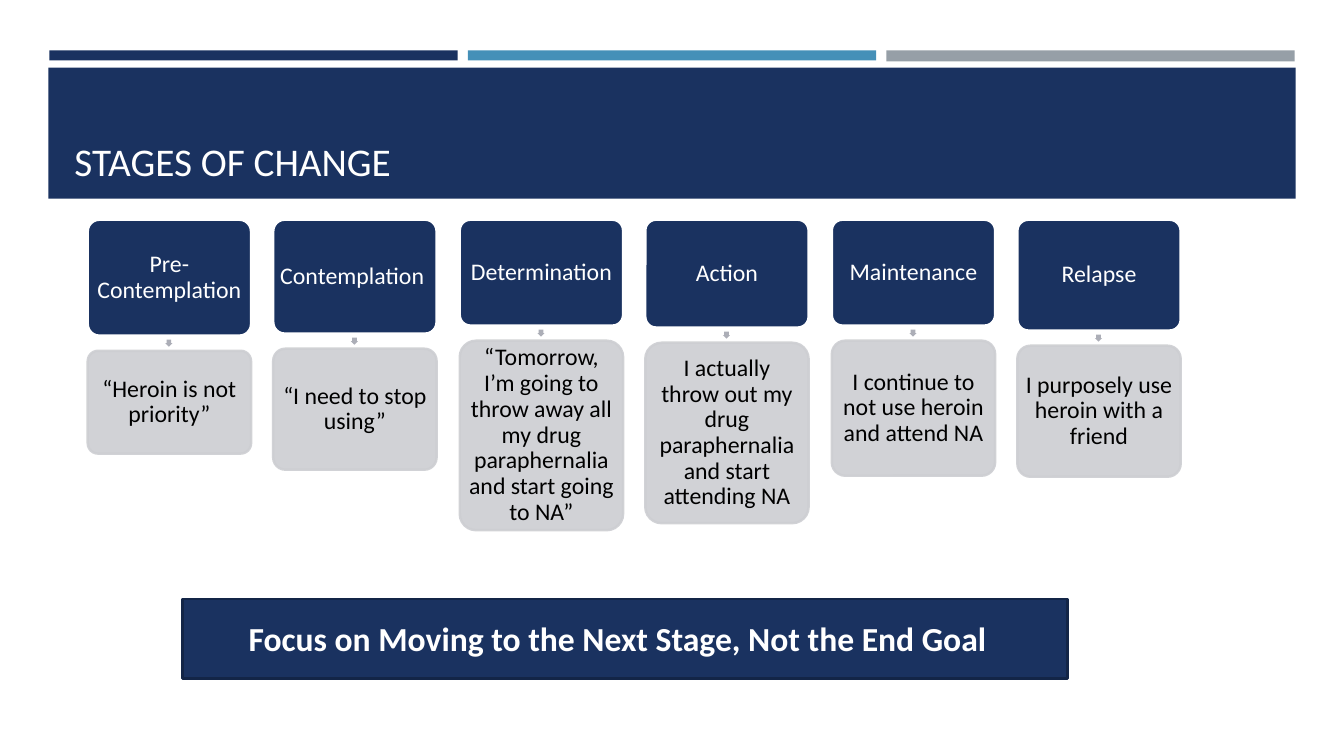
"""Build the "Stages of Change" slide."""
from dataclasses import dataclass
from typing import Optional

from lxml import etree
from pptx import Presentation
from pptx.dml.color import RGBColor
from pptx.dml.fill import FillFormat
from pptx.enum.shapes import MSO_SHAPE
from pptx.enum.text import MSO_ANCHOR, MSO_AUTO_SIZE, PP_ALIGN
from pptx.oxml.ns import qn
from pptx.shapes.autoshape import Shape
from pptx.slide import Slide
from pptx.util import Emu, Pt

RECTANGLE = MSO_SHAPE.RECTANGLE
ROUNDED = MSO_SHAPE.ROUNDED_RECTANGLE
ARROW = MSO_SHAPE.RIGHT_ARROW
CENTER = PP_ALIGN.CENTER
LEFT = PP_ALIGN.LEFT
MIDDLE = MSO_ANCHOR.MIDDLE
BOTTOM = MSO_ANCHOR.BOTTOM
FIT_SHAPE = MSO_AUTO_SIZE.SHAPE_TO_FIT_TEXT

NAVY = RGBColor(0x1A, 0x32, 0x60)
DARK_NAVY = RGBColor(0x13, 0x25, 0x47)
BLUE = RGBColor(0x45, 0x90, 0xB8)
GRAY = RGBColor(0x96, 0x9F, 0xA7)
ARROW_GRAY = RGBColor(0xAC, 0xAE, 0xB7)
PALE_GRAY = RGBColor(0xCD, 0xCE, 0xD2)
WHITE = RGBColor(0xFF, 0xFF, 0xFF)
BLACK = RGBColor(0x00, 0x00, 0x00)

FONT = "Calibri"
EMU_PER_PX = 9144
OUTLINE_WIDTH = Pt(1.75)

CARD_WIDTH = 162
CARD_TOP = 218
FIRST_CARD_LEFT = 87
CARD_PITCH_TENTHS = 1845
ARROW_SIZE = 7
ARROW_GAP = 4
CARD_INSET = 2


@dataclass(frozen=True)
class Box:
    """A rectangle in px."""
    left: int
    top: int
    width: int
    height: int

    def emu(self) -> tuple[Emu, ...]:
        """Return the rectangle in EMU."""
        return tuple(px(n) for n in (self.left, self.top, self.width, self.height))


@dataclass(frozen=True)
class Block:
    """A plain filled rectangle."""
    box: Box
    fill: RGBColor
    line: Optional[RGBColor] = None


@dataclass(frozen=True)
class Stage:
    """A stage of change with its example and the heights of both cards."""
    name: str
    name_height: int
    example: str
    example_height: int


BLOCKS = (
    Block(Box(49, 50, 405, 10), NAVY),
    Block(Box(879, 50, 405, 11), GRAY),
    Block(Box(464, 50, 405, 10), BLUE),
    Block(Box(48, 67, 1237, 130), NAVY),
    Block(Box(181, 594, 878, 79), NAVY, DARK_NAVY),
)

STAGES = (
    Stage("Pre-Contemplation", 115, "“Heroin is not priority”", 102),
    Stage("Contemplation ", 113, "“I need to stop using”", 120),
    Stage("Determination", 105,
          "“Tomorrow, I’m going to throw away all my drug paraphernalia "
          "and start going to NA”", 188),
    Stage("Action", 107,
          "I actually throw out my drug paraphernalia and start attending NA", 179),
    Stage("Maintenance", 105, "I continue to not use heroin and attend NA", 134),
    Stage("Relapse", 110, "I purposely use heroin with a friend", 130),
)


def px(length: int) -> Emu:
    """Convert px to EMU."""
    return Emu(length * EMU_PER_PX)


def set_opacity(fill: FillFormat, percent: int) -> None:
    """Make a solid fill partly transparent."""
    color = fill._xPr.find(qn("a:solidFill"))[0]
    etree.SubElement(color, qn("a:alpha"), val=str(percent * 1000))


def add_block(slide: Slide, kind: MSO_SHAPE, box: Box, fill: RGBColor,
              line: Optional[RGBColor] = None) -> Shape:
    """Add a flat shape with an optional outline."""
    shape = slide.shapes.add_shape(kind, *box.emu())
    shape.shadow.inherit = False
    shape.fill.solid()
    shape.fill.fore_color.rgb = fill
    if line is None:
        shape.line.fill.background()
    else:
        shape.line.color.rgb = line
        shape.line.width = OUTLINE_WIDTH
    return shape


def write(shape: Shape, text: str, size: int, color: RGBColor,
          alignment: PP_ALIGN = CENTER, bold: bool = False) -> None:
    """Put one formatted paragraph in a shape."""
    shape.text_frame.text = text
    paragraph = shape.text_frame.paragraphs[0]
    paragraph.alignment = alignment
    font = paragraph.runs[0].font
    font.name = FONT
    font.size = Pt(size)
    font.bold = bold
    font.color.rgb = color


def add_card(slide: Slide, box: Box, text: str, fill: RGBColor,
             line: RGBColor, text_color: RGBColor) -> Shape:
    """Add a rounded card with centred text."""
    card = add_block(slide, ROUNDED, box, fill, line)
    card.adjustments[0] = 0.1
    write(card, text, 17, text_color)
    frame = card.text_frame
    frame.word_wrap = True
    frame.vertical_anchor = MIDDLE
    frame.margin_left = frame.margin_right = px(CARD_INSET)
    frame.margin_top = frame.margin_bottom = px(CARD_INSET)
    frame.paragraphs[0].line_spacing = 0.9
    return card


def add_stage(slide: Slide, left: int, stage: Stage) -> None:
    """Add a stage card, its arrow and its example card."""
    add_card(slide, Box(left, CARD_TOP, CARD_WIDTH, stage.name_height),
             stage.name, NAVY, WHITE, WHITE)

    arrow_top = CARD_TOP + stage.name_height + ARROW_GAP
    arrow_left = left + (CARD_WIDTH - ARROW_SIZE) // 2
    arrow = add_block(slide, ARROW, Box(arrow_left, arrow_top, ARROW_SIZE, ARROW_SIZE),
                      ARROW_GRAY)
    arrow.rotation = 90
    arrow.adjustments[0] = 0.67

    example_top = arrow_top + ARROW_SIZE + ARROW_GAP
    example = add_card(slide, Box(left, example_top, CARD_WIDTH, stage.example_height),
                       stage.example, PALE_GRAY, PALE_GRAY, BLACK)
    set_opacity(example.fill, 90)
    set_opacity(example.line.fill, 90)


def main() -> None:
    """Build and save the presentation."""
    presentation = Presentation()
    presentation.slide_width = px(1333)
    presentation.slide_height = px(750)
    slide = presentation.slides.add_slide(presentation.slide_layouts[6])

    for block in BLOCKS:
        add_block(slide, RECTANGLE, block.box, block.fill, block.line)

    title = slide.shapes.add_textbox(*Box(64, 77, 1206, 111).emu())
    write(title, "STAGES OF CHANGE", 28, WHITE, LEFT)
    title.text_frame.word_wrap = True
    title.text_frame.vertical_anchor = BOTTOM

    message = slide.shapes.add_textbox(*Box(181, 608, 863, 50).emu())
    write(message, "Focus on Moving to the Next Stage, Not the End Goal", 24, WHITE,
          bold=True)
    message.text_frame.word_wrap = False
    message.text_frame.auto_size = FIT_SHAPE

    for index, stage in enumerate(STAGES):
        add_stage(slide, FIRST_CARD_LEFT + index * CARD_PITCH_TENTHS // 10, stage)

    presentation.save("out.pptx")


if __name__ == "__main__":
    main()
